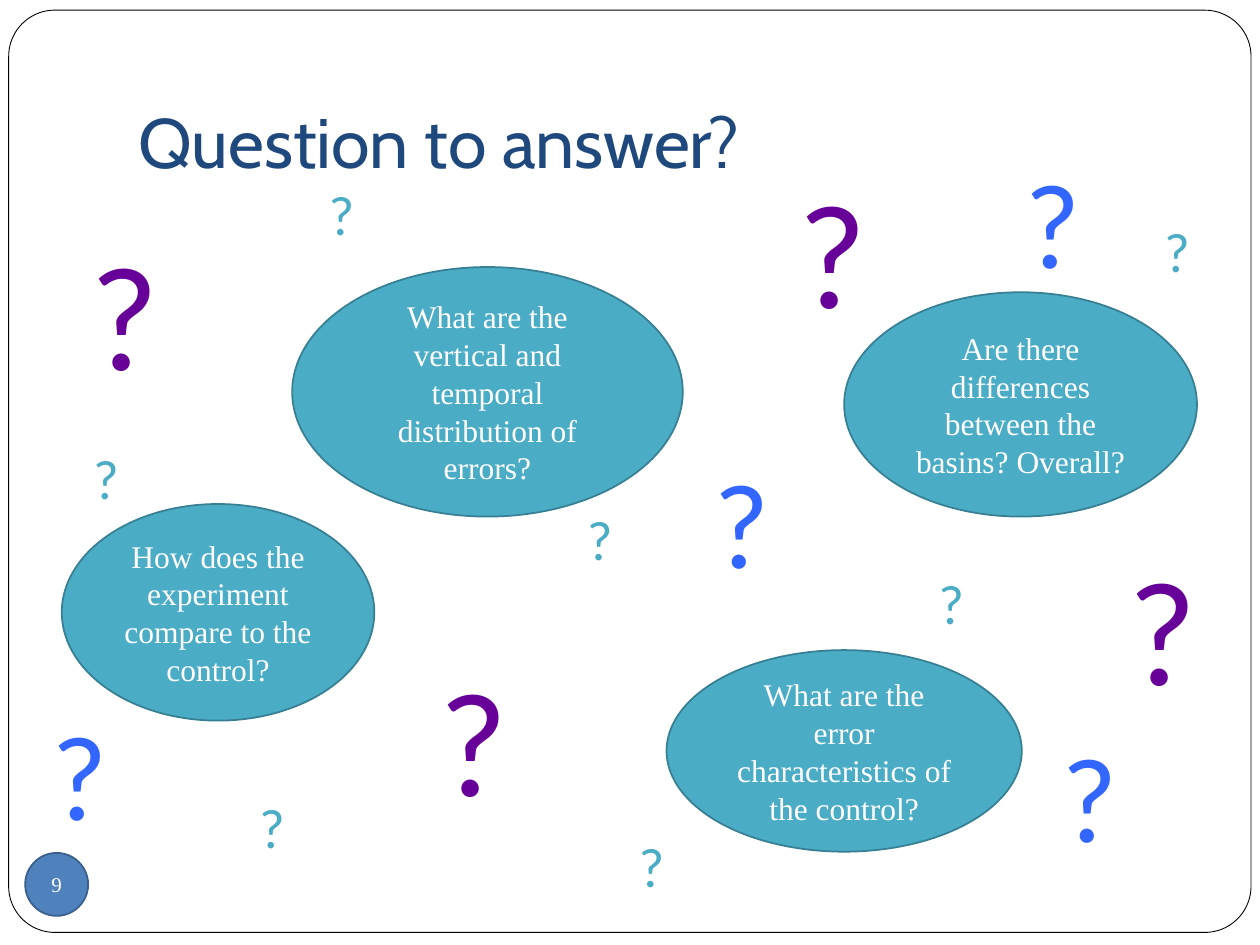
from pptx import Presentation
from pptx.dml.color import RGBColor
from pptx.enum.shapes import MSO_SHAPE
from pptx.enum.text import MSO_ANCHOR, MSO_AUTO_SIZE, PP_ALIGN
from pptx.util import Pt

WHITE = RGBColor(0xFF, 0xFF, 0xFF)
BLACK = RGBColor(0x00, 0x00, 0x00)
NAVY = RGBColor(0x1F, 0x49, 0x7D)
STEEL = RGBColor(0x4F, 0x81, 0xBD)
STEEL_EDGE = RGBColor(0x3A, 0x5F, 0x8C)
TEAL = RGBColor(0x4B, 0xAC, 0xC6)
TEAL_EDGE = RGBColor(0x37, 0x7F, 0x92)
PURPLE = RGBColor(0x66, 0x00, 0x99)
BLUE = RGBColor(0x33, 0x66, 0xFF)

FRAME_BOX = (5, 5.8, 709.9, 527)
BADGE_BOX = (14.4, 487.4, 36, 36)
TITLE_BOX = (72, 21.6, 612, 90)

QUESTIONS = [
    ("What are the vertical and temporal distribution of errors?", (167, 152.6, 223.2, 142.6)),
    ("What are the error characteristics of the control?", (380.9, 371.5, 203, 115.2)),
    ("How does the experiment compare to the control?", (35.3, 288, 178.6, 123.8)),
    ("Are there differences between the basins? Overall?", (482.4, 167, 201.6, 128.2)),
]

MARK_GROUPS = [
    (80, PURPLE, (63.4, 104.4),
     [(450.7, 92.9), (46.1, 128.2), (639.4, 308.2), (245.5, 371.5)]),
    (65, BLUE, (63.4, 85.7),
     [(402.5, 256.3), (23.8, 400.3), (580.3, 85), (601.2, 412.6)]),
    (30, TEAL, (50.4, 43.9),
     [(46.8, 252), (658.8, 122.4), (329, 286.6), (181.4, 100.8),
      (358.6, 473.8), (529.9, 323.3), (141.8, 451.4)]),
]


def apply_format(target, values):
    for name, value in values.items():
        setattr(target, name, value)


def write_text(shape, text, size, font_name, color, frame_format, alignment=PP_ALIGN.LEFT):
    apply_format(shape.text_frame, {"word_wrap": True, **frame_format})
    paragraph = shape.text_frame.paragraphs[0]
    paragraph.alignment = alignment
    run = paragraph.add_run()
    run.text = text
    apply_format(run.font, {"size": Pt(size), "name": font_name})
    run.font.color.rgb = color


def add_outlined_shape(slide, kind, box, fill, edge, edge_width):
    shape = slide.shapes.add_shape(kind, *map(Pt, box))
    shape.shadow.inherit = False
    shape.fill.solid()
    shape.fill.fore_color.rgb = fill
    shape.line.color.rgb = edge
    shape.line.width = Pt(edge_width)
    return shape


def add_frame(slide, box):
    frame = add_outlined_shape(slide, MSO_SHAPE.ROUNDED_RECTANGLE, box, WHITE, BLACK, 0.5)
    frame.adjustments[0] = 0.05


def add_bubble(slide, box, text, size, fill, edge):
    bubble = add_outlined_shape(slide, MSO_SHAPE.OVAL, box, fill, edge, 1)
    write_text(bubble, text, size, "Times New Roman", WHITE,
               {"vertical_anchor": MSO_ANCHOR.MIDDLE}, PP_ALIGN.CENTER)


def add_title(slide, box, text):
    title = slide.shapes.add_textbox(*map(Pt, box))
    write_text(title, text, 40, "Cabin", NAVY,
               {"vertical_anchor": MSO_ANCHOR.BOTTOM, "margin_bottom": Pt(7.2)})


def add_mark(slide, box, size, color):
    mark = slide.shapes.add_textbox(*map(Pt, box))
    write_text(mark, "?", size, "Lato", color,
               {"auto_size": MSO_AUTO_SIZE.SHAPE_TO_FIT_TEXT})


def main():
    presentation = Presentation()
    apply_format(presentation, {"slide_width": Pt(720), "slide_height": Pt(540)})
    slide = presentation.slides.add_slide(presentation.slide_layouts[6])

    add_frame(slide, FRAME_BOX)
    add_bubble(slide, BADGE_BOX, "9", 12, STEEL, STEEL_EDGE)
    add_title(slide, TITLE_BOX, "Question to answer?")
    for question, box in QUESTIONS:
        add_bubble(slide, box, question, 18, TEAL, TEAL_EDGE)
    for size, color, extent, positions in MARK_GROUPS:
        for position in positions:
            add_mark(slide, position + extent, size, color)

    presentation.save("out.pptx")


if __name__ == "__main__":
    main()
